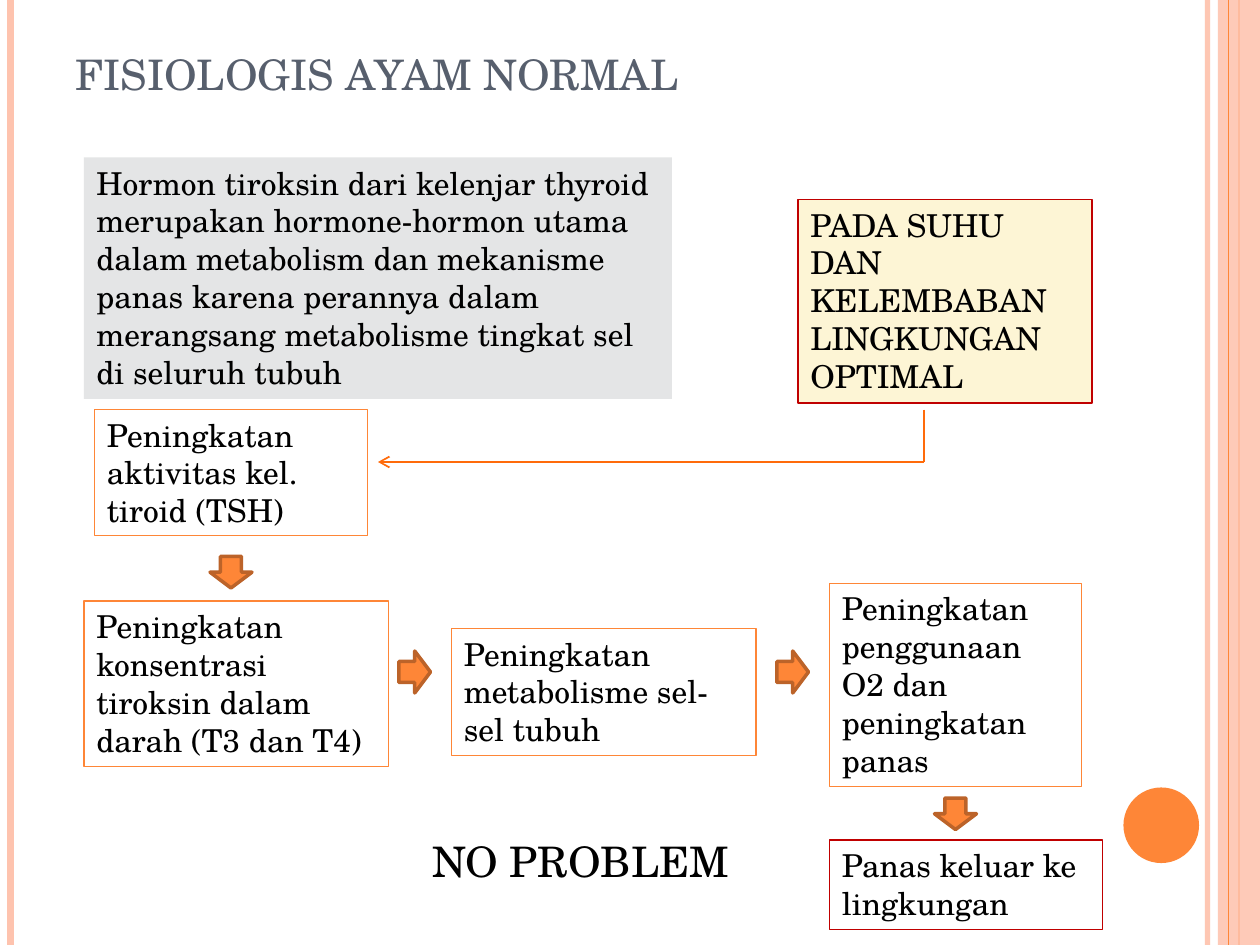
"""Build the slide on the physiology of a normal chicken."""
from lxml import etree
from pptx import Presentation, util as u
from pptx.dml.color import RGBColor
from pptx.enum import shapes, text
from pptx.oxml.ns import qn

FONT = "TeX Gyre Schola"
UNIT = u.Inches(1) / 12
COLS, ROWS = 120, 90
BLACK = RGBColor(0x00, 0x00, 0x00)
SLATE = RGBColor(0x57, 0x5F, 0x6D)
ORANGE = RGBColor(0xFE, 0x86, 0x37)
RUST = RGBColor(0xBC, 0x63, 0x29)
FLAME = RGBColor(0xFF, 0x6B, 0x0A)
PEACH = RGBColor(0xFE, 0xC3, 0xAE)
GREY = RGBColor(0xE4, 0xE5, 0xE6)
CREAM = RGBColor(0xFD, 0xF5, 0xD5)
RED = RGBColor(0xC0, 0x00, 0x00)

RULES = [(115, PEACH, 3, 93), (1, PEACH, 4.5, 100),
         (118, ORANGE, 1.5, 100), (117, ORANGE, 0.75, 100)]
BOXES = [
    ("Hormon tiroksin dari kelenjar thyroid merupakan hormone-hormon utama "
     "dalam metabolism dan mekanisme panas karena perannya dalam merangsang "
     "metabolisme tingkat sel di seluruh tubuh", (8, 15, 56, 23), GREY, None),
    ("Peningkatan aktivitas kel. tiroid (TSH)", (9, 39, 26, 12), None, ORANGE),
    ("Peningkatan konsentrasi tiroksin dalam darah (T3 dan T4)",
     (8, 57.25, 29, 15.75), None, ORANGE),
    ("Peningkatan metabolisme sel-sel tubuh",
     (43, 59.85, 29, 12.1), None, ORANGE),
    ("Peningkatan penggunaan O2 dan peningkatan panas",
     (79, 55.55, 24, 19.4), None, ORANGE),
    ("PADA SUHU DAN KELEMBABAN LINGKUNGAN OPTIMAL",
     (76, 19, 28, 19.4), CREAM, RED),
    ("Panas keluar ke lingkungan", (79, 80, 26, 8.5), None, RED),
]
DOWN, RIGHT = shapes.MSO_SHAPE.DOWN_ARROW, shapes.MSO_SHAPE.RIGHT_ARROW
ARROWS = [(DOWN, 20, 53), (RIGHT, 38, 62), (RIGHT, 74, 62), (DOWN, 89, 76)]


def scale(nums):
    """Turn grid units into lengths."""
    return [u.Emu(round(n * UNIT)) for n in nums]


def fade(fill, share):
    """Set the opacity of a solid fill in percent."""
    color = fill._xPr.find(qn("a:solidFill"))[0]
    etree.SubElement(color, qn("a:alpha")).set("val", str(share * 1000))


def shape(slide, kind, at, fill=None, line=None, width=0.75):
    """Add a preset shape without shadow."""
    item = slide.shapes.add_shape(kind, *scale(at))
    item.shadow.inherit = False
    if fill is None:
        item.fill.background()
    else:
        item.fill.solid()
        item.fill.fore_color.rgb = fill
    if line is None:
        item.line.fill.background()
    else:
        item.line.color.rgb = line
        item.line.width = u.Pt(width)
    return item


def rule(slide, ends, color, width, share=100, head=False):
    """Add a straight line, with an arrowhead at its end if asked."""
    item = slide.shapes.add_connector(shapes.MSO_CONNECTOR.STRAIGHT,
                                      *scale(ends))
    item.line.color.rgb = color
    item.line.width = u.Pt(width)
    if share < 100:
        fade(item.line.fill, share)
    if head:
        line = item.line._get_or_add_ln()
        etree.SubElement(line, qn("a:tailEnd")).set("type", "arrow")
    etree.SubElement(item._element.spPr, qn("a:effectLst"))


def write(frame, words, size, color=BLACK, anchor=text.MSO_ANCHOR.TOP,
          fit=text.MSO_AUTO_SIZE.SHAPE_TO_FIT_TEXT):
    """Put one left-aligned run into a text frame."""
    frame.word_wrap = True
    frame.auto_size = fit
    frame.vertical_anchor = anchor
    para = frame.paragraphs[0]
    para.alignment = text.PP_ALIGN.LEFT
    run = para.add_run()
    run.text = words
    run.font.name = FONT
    run.font.size = u.Pt(size)
    run.font.color.rgb = color


def trim(slide):
    """Draw the stripes and the disc at the edges."""
    for col, color, width, share in RULES[:3]:
        rule(slide, (col, 0, col, ROWS), color, width, share)
    band = shape(slide, shapes.MSO_SHAPE.RECTANGLE, (116, 0, 4, ROWS), PEACH)
    fade(band.fill, 87)
    col, color, width, share = RULES[3]
    rule(slide, (col, 0, col, ROWS), color, width, share)
    shape(slide, shapes.MSO_SHAPE.OVAL, (107, 75, 7.2, 7.2), ORANGE)


def head(slide):
    """Place and fill the title."""
    title = slide.shapes.title
    title.left, title.top, title.width, title.height = scale((6, 2, 108, 8))
    write(title.text_frame, "FISIOLOGIS AYAM NORMAL", 24, SLATE,
          text.MSO_ANCHOR.BOTTOM, text.MSO_AUTO_SIZE.NONE)


def main():
    """Build and save the slide."""
    deck = Presentation()
    deck.slide_width, deck.slide_height = scale((COLS, ROWS))
    slide = deck.slides.add_slide(deck.slide_layouts[5])
    trim(slide)
    head(slide)
    for words, at, fill, line in BOXES:
        box = shape(slide, shapes.MSO_SHAPE.RECTANGLE, at, fill, line)
        write(box.text_frame, words, 18)
    for kind, col, row in ARROWS:
        size = (4, 3) if kind == DOWN else (3, 4)
        shape(slide, kind, (col, row, *size), ORANGE, RUST, 2)
    rule(slide, (88, 39, 88, 44), FLAME, 1)
    rule(slide, (88, 44, 36, 44), FLAME, 1, head=True)
    note = slide.shapes.add_textbox(*scale((40, 79, 31, 6)))
    write(note.text_frame, "NO PROBLEM", 24)
    deck.save("out.pptx")


if __name__ == "__main__":
    main()
